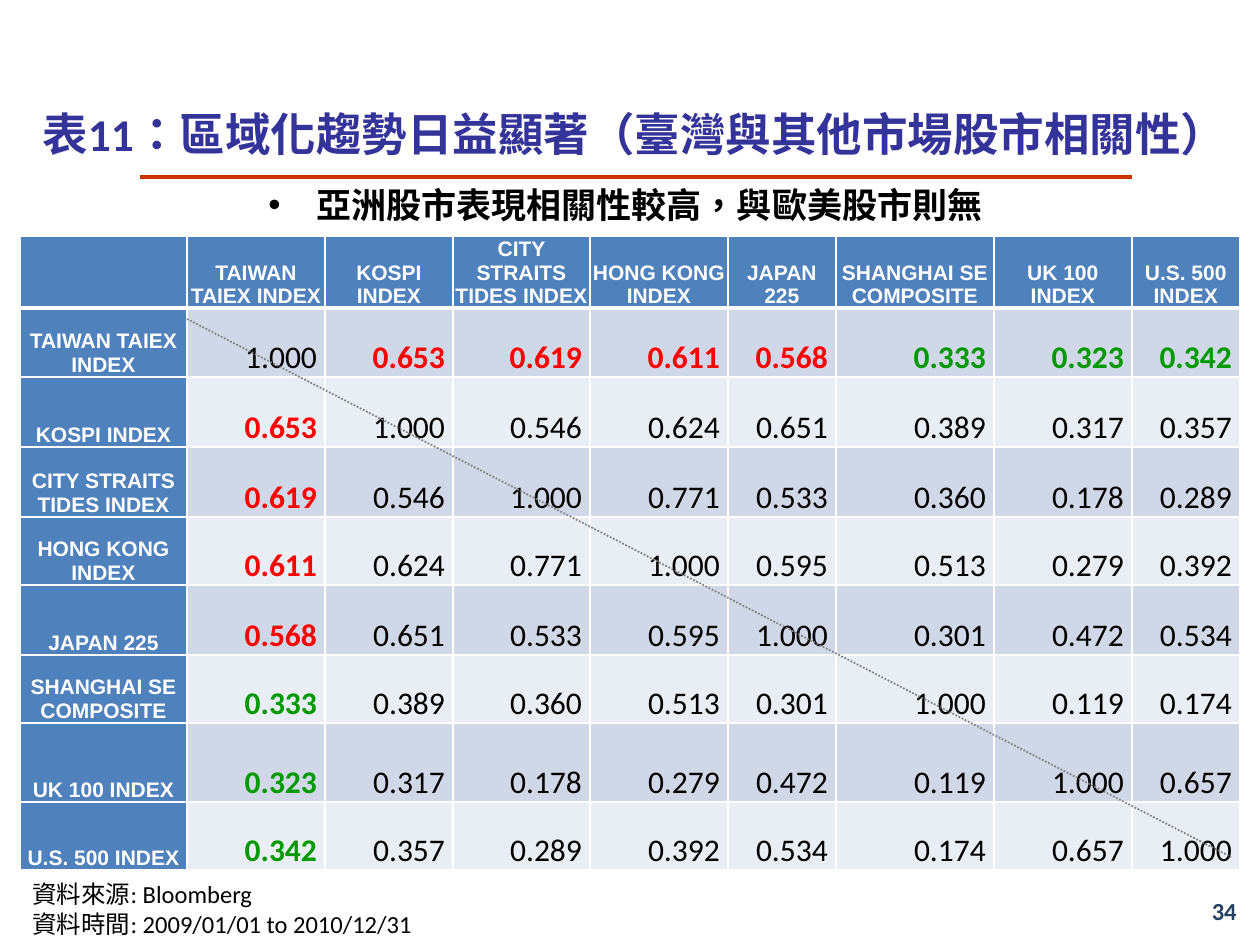
from lxml.etree import SubElement
from pptx import Presentation
from pptx.dml.color import RGBColor
from pptx.enum.dml import MSO_LINE
from pptx.enum.lang import MSO_LANGUAGE_ID
from pptx.enum.shapes import MSO_CONNECTOR
from pptx.enum.text import MSO_ANCHOR, PP_ALIGN
from pptx.oxml.ns import qn
from pptx.util import Emu, Pt

NAVY = RGBColor(0x33, 0x33, 0x99)
RUST = RGBColor(0xCC, 0x33, 0x00)
BLUE = RGBColor(0x4F, 0x81, 0xBD)
BANDS = [RGBColor(0xD0, 0xD8, 0xE8), RGBColor(0xE9, 0xED, 0xF4)]
INK = RGBColor(0x25, 0x40, 0x61)
GRAY = RGBColor(0x80, 0x80, 0x80)
RED = RGBColor(0xFF, 0x00, 0x00)
GREEN = RGBColor(0x00, 0x99, 0x00)
BLACK = RGBColor(0x00, 0x00, 0x00)
WHITE = RGBColor(0xFF, 0xFF, 0xFF)

LANG = {"language_id": MSO_LANGUAGE_ID.TRADITIONAL_CHINESE}
TITLE = {"name": "Calibri", "size": Pt(26), "bold": True, **LANG}
POINT = {"name": "Calibri", "size": Pt(20), "bold": True, **LANG}
HEAD = {"name": "Arial", "size": Pt(12), "bold": True}
VALUE = {"name": "Calibri", "size": Pt(18), "bold": False}
STRONG = {**VALUE, "bold": True}
NOTE = {"name": "Calibri", "size": Pt(14), "bold": False, **LANG}
PAGE = {**NOTE, "bold": True}

NAMES = ["TAIWAN TAIEX INDEX", "KOSPI INDEX", "CITY STRAITS TIDES INDEX",
         "HONG KONG INDEX", "JAPAN 225", "SHANGHAI SE COMPOSITE",
         "UK 100 INDEX", "U.S. 500 INDEX"]
# Upper triangle of the symmetric matrix, diagonal first
UPPER = [
    [1, 0.653, 0.619, 0.611, 0.568, 0.333, 0.323, 0.342],
    [1, 0.546, 0.624, 0.651, 0.389, 0.317, 0.357],
    [1, 0.771, 0.533, 0.360, 0.178, 0.289],
    [1, 0.595, 0.513, 0.279, 0.392],
    [1, 0.301, 0.472, 0.534],
    [1, 0.119, 0.174],
    [1, 0.657],
    [1],
]
ASIA = 5  # the first five markets correlate strongly
COLS = [167, 138, 128, 137, 138, 108, 158, 138, 108]
ROWS = [72, 69, 70, 70, 68, 70, 68, 79, 68]


def px(num):
    return Emu(round(num * 914400 / 126))


def write(para, text, style, color, align=PP_ALIGN.LEFT):
    para.alignment = align
    run = para.add_run()
    run.text = text
    for key, val in style.items():
        setattr(run.font, key, val)
    run.font.color.rgb = color


def place(shape, *box):
    for key, num in zip(("left", "top", "width", "height"), box):
        setattr(shape, key, px(num))
    return shape.text_frame


def add_note(slide, box, lines, style, color, align, anchor):
    frame = slide.shapes.add_textbox(*map(px, box)).text_frame
    frame.word_wrap = True
    frame.vertical_anchor = anchor
    for i, line in enumerate(lines):
        para = frame.add_paragraph() if i else frame.paragraphs[0]
        write(para, line, style, color, align)


def add_line(slide, ends, color, width, dash=None):
    line = slide.shapes.add_connector(MSO_CONNECTOR.STRAIGHT, *map(px, ends))
    line.line.color.rgb = color
    line.line.width = Pt(width)
    if dash:
        line.line.dash_style = dash
    SubElement(line._element.spPr, qn("a:effectLst"))


def add_point(frame, text):
    para = frame.paragraphs[0]
    para.space_before = Pt(0)
    props = para._p.get_or_add_pPr()
    props.set("marL", str(px(48)))
    props.set("indent", str(-px(48)))
    SubElement(props, qn("a:buFont")).set("typeface", "Arial")
    SubElement(props, qn("a:buChar")).set("char", "•")
    write(para, text, POINT, BLACK, PP_ALIGN.CENTER)


def add_edge(cell, width):
    # Bottom border, which has to come before the fill
    props = cell._tc.get_or_add_tcPr()
    edge = SubElement(props, qn("a:lnB"), w=str(Pt(width)))
    fill = SubElement(edge, qn("a:solidFill"))
    SubElement(fill, qn("a:srgbClr"), val=str(WHITE))
    props.insert(0, edge)


def fill_cell(cell, row, col):
    head = row == 0 or col == 0
    cell.fill.solid()
    cell.fill.fore_color.rgb = BLUE if head else BANDS[(row - 1) % 2]
    cell.vertical_anchor = MSO_ANCHOR.BOTTOM
    if row == 0:
        add_edge(cell, 3)
    edges = {"left": 1, "top": 1, "right": 1 if head else 8, "bottom": 0}
    for side, gap in edges.items():
        setattr(cell, f"margin_{side}", px(gap))
    para = cell.text_frame.paragraphs[0]
    if head:
        if row or col:
            write(para, NAMES[max(row, col) - 1], HEAD, WHITE, PP_ALIGN.CENTER)
        return
    low, high = sorted((row - 1, col - 1))
    # Pairs with Taiwan are bold: red for Asia, green for the rest
    style, color = VALUE, BLACK
    if low == 0 and high > 0:
        style, color = STRONG, RED if high < ASIA else GREEN
    write(para, f"{UPPER[low][high - low]:.3f}", style, color, PP_ALIGN.RIGHT)


def add_grid(slide):
    box = map(px, (20, 236, sum(COLS), sum(ROWS)))
    table = slide.shapes.add_table(len(ROWS), len(COLS), *box).table
    for col, wide in zip(table.columns, COLS):
        col.width = px(wide)
    for row, high in zip(table.rows, ROWS):
        row.height = px(high)
    for r in range(len(ROWS)):
        for c in range(len(COLS)):
            fill_cell(table.cell(r, c), r, c)


def main():
    deck = Presentation()
    deck.slide_width, deck.slide_height = px(1260), px(945)
    slide = deck.slides.add_slide(deck.slide_layouts[1])

    # Title, rule and key point
    frame = place(slide.shapes.title, 10, 69, 1250, 129)
    frame.vertical_anchor = MSO_ANCHOR.MIDDLE
    write(frame.paragraphs[0], "表11：區域化趨勢日益顯著（臺灣與其他市場股市相關性）",
          TITLE, NAVY, PP_ALIGN.CENTER)
    add_line(slide, (140, 177, 1132, 177), RUST, 2.25)
    frame = place(slide.placeholders[1], 15, 177, 1221, 79)
    add_point(frame, "亞洲股市表現相關性較高，與歐美股市則無")

    # Correlation table with its diagonal
    add_grid(slide)
    add_line(slide, (187, 319, 1231, 857), GRAY, 1, MSO_LINE.ROUND_DOT)

    # Page number and source
    add_note(slide, (955, 886, 294, 50), ["34"], PAGE, INK,
             PP_ALIGN.RIGHT, MSO_ANCHOR.MIDDLE)
    add_note(slide, (20, 873, 1053, 72),
             ["資料來源: Bloomberg", "資料時間: 2009/01/01 to 2010/12/31"],
             NOTE, BLACK, PP_ALIGN.LEFT, MSO_ANCHOR.TOP)
    deck.save("out.pptx")


if __name__ == "__main__":
    main()
